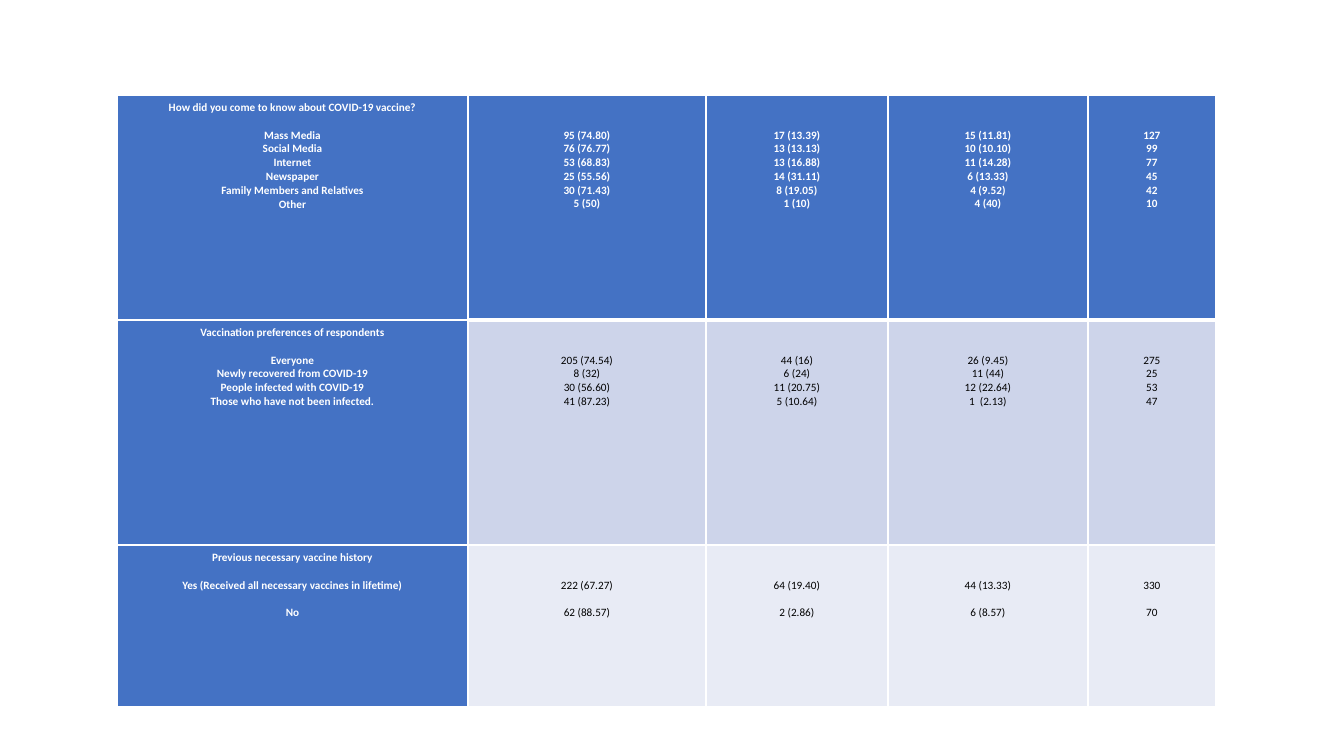
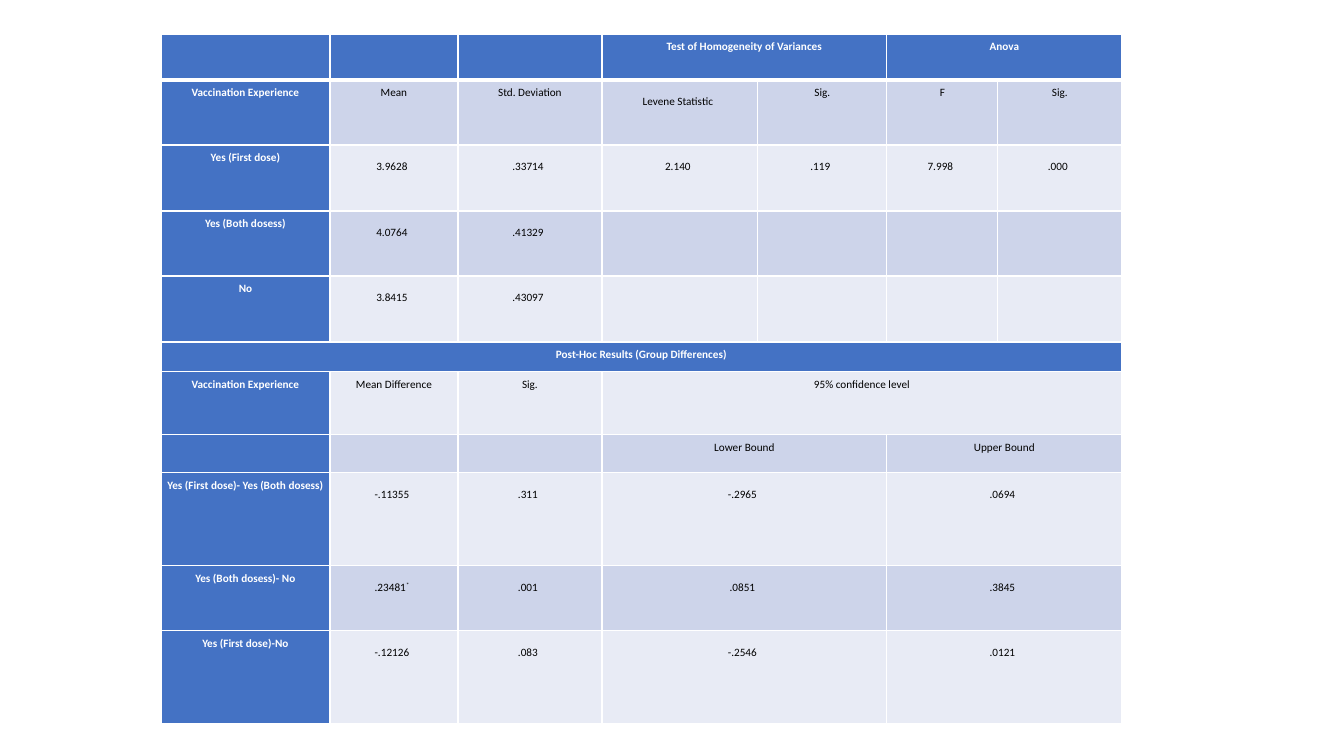
import pptx
import pptx.util
import pptx.dml.color
import pptx.enum.text
import pptx.oxml.ns
import lxml.etree

PX = 914400 / 100.8
FONT, SIZE = "Calibri", 8
LINE = 9.76  # points, height of one text line
INSET = 6
COLORS = {"head": "4472C4", "odd": "CDD4EA", "even": "E8EBF5",
          "white": "FFFFFF", "black": "000000"}

# Each question: heading, blank lines between answers, answers with their counts
SURVEY = [
    ("How did you come to know about COVID-19 vaccine?", 0, [
        ("Mass Media", "95 (74.80)", "17 (13.39)", "15 (11.81)", "127"),
        ("Social Media", "76 (76.77)", "13 (13.13)", "10 (10.10)", "99"),
        ("Internet", "53 (68.83)", "13 (16.88)", "11 (14.28)", "77"),
        ("Newspaper", "25 (55.56)", "14 (31.11)", "6 (13.33)", "45"),
        ("Family Members and Relatives", "30 (71.43)", "8 (19.05)", "4 (9.52)", "42"),
        ("Other", "5 (50)", "1 (10)", "4 (40)", "10"),
    ]),
    ("Vaccination preferences of respondents", 0, [
        ("Everyone", "205 (74.54)", "44 (16)", "26 (9.45)", "275"),
        ("Newly recovered from COVID-19", "8 (32)", "6 (24)", "11 (44)", "25"),
        ("People infected with COVID-19", "30 (56.60)", "11 (20.75)", "12 (22.64)", "53"),
        ("Those who have not been infected.", "41 (87.23)", "5 (10.64)", "1  (2.13)", "47"),
    ]),
    ("Previous necessary vaccine history", 1, [
        ("Yes (Received all necessary vaccines in lifetime)",
         "222 (67.27)", "64 (19.40)", "44 (13.33)", "330"),
        ("No", "62 (88.57)", "2 (2.86)", "6 (8.57)", "70"),
    ]),
]
SURVEY_GRID = {"left": 117, "top": 95, "cols": [351, 238, 182, 200, 128],
               "rows": [225, 225, 162]}

# None continues the cell on its left; * is set as superscript
ANOVA = [
    ("", "", "", "Test of Homogeneity of Variances", None, "Anova", None),
    ("Vaccination Experience", "Mean", "Std. Deviation", "Levene Statistic", "Sig.", "F", "Sig."),
    ("Yes (First dose)", "3.9628", ".33714", "2.140", ".119", "7.998", ".000"),
    ("Yes (Both dosess)", "4.0764", ".41329", "", "", "", ""),
    ("No", "3.8415", ".43097", "", "", "", ""),
    ("Post-Hoc Results (Group Differences)", None, None, None, None, None, None),
    ("Vaccination Experience", "Mean Difference", "Sig.", "95% confidence level", None, None, None),
    ("", "", "", "Lower Bound", None, "Upper Bound", None),
    ("Yes (First dose)- Yes (Both dosess)", "-.11355", ".311", "-.2965", None, ".0694", None),
    ("Yes (Both dosess)- No", ".23481*", ".001", ".0851", None, ".3845", None),
    ("Yes (First dose)-No", "-.12126", ".083", "-.2546", None, ".0121", None),
]
ANOVA_GRID = {"left": 161, "top": 34, "cols": [169, 128, 144, 156, 129, 111, 124],
              "rows": [46, 65, 66, 65, 66, 30, 63, 38, 93, 65, 93]}


def px(n):
    return pptx.util.Emu(round(n * PX))


def rgb(name):
    return pptx.dml.color.RGBColor.from_string(COLORS[name])


def sub(parent, tag, **attrs):
    return lxml.etree.SubElement(parent, pptx.oxml.ns.qn(tag), attrs)


def add_text(p, text, color="black", bold=False, tall=False):
    """Centre the text; tall lines are 16 pt high with a slight right indent."""
    p.alignment = pptx.enum.text.PP_ALIGN.CENTER
    if tall:
        p.line_spacing = pptx.util.Pt(16)
        p._p.get_or_add_pPr().set("marR", str(px(4)))
    for i, part in enumerate(text.partition("*")):
        if not part:
            continue
        r = p.add_run()
        r.text = part
        r.font.name, r.font.size = FONT, pptx.util.Pt(SIZE)
        r.font.bold = bold
        r.font.color.rgb = rgb(color)
        if i == 1:
            r._r.get_or_add_rPr().set("baseline", "30000")
    if not text:
        sub(p._p, "a:endParaRPr", sz=str(SIZE * 100))


def style_cell(cell, fill, thick=()):
    """White borders, 3 pt on the thick sides and 1 pt elsewhere, then the fill."""
    tcPr = cell._tc.get_or_add_tcPr()
    for side in "LRTB":
        width = pptx.util.Pt(3 if side in thick else 1)
        ln = sub(tcPr, "a:ln" + side, w=str(width))
        sub(sub(ln, "a:solidFill"), "a:srgbClr", val=COLORS["white"])
    cell.fill.solid()
    cell.fill.fore_color.rgb = rgb(fill)


def fill_cell(cell, lines, **fmt):
    """lines holds (text, blank lines above it) pairs."""
    cell.margin_left = cell.margin_right = cell.margin_bottom = px(INSET)
    cell.margin_top = px(INSET) + pptx.util.Pt(lines[0][1] * LINE)
    tf = cell.text_frame
    for i, (text, gap) in enumerate(lines):
        p = tf.add_paragraph() if i else tf.paragraphs[0]
        if i and gap:
            p.space_before = pptx.util.Pt(gap * LINE)
        add_text(p, text, **fmt)


def add_grid(prs, grid, cells, head_rows=(0,), rule_from=0, is_tall=lambda text: False):
    """One slide with one table; the rule under the first row starts at column rule_from."""
    s = prs.slides.add_slide(prs.slide_layouts[6])
    cols, rows = grid["cols"], grid["rows"]
    table = s.shapes.add_table(len(rows), len(cols), px(grid["left"]), px(grid["top"]),
                               px(sum(cols)), px(sum(rows))).table
    table.first_row = table.horz_banding = False
    for column, width in zip(table.columns, cols):
        column.width = px(width)
    for row, height in zip(table.rows, rows):
        row.height = px(height)
    for y, row in enumerate(cells):
        for x, lines in enumerate(row):
            cell = table.cell(y, x)
            head = x == 0 or y in head_rows
            thick = {0: "B", 1: "T"}.get(y, "") if x >= rule_from else ""
            style_cell(cell, "head" if head else ("even", "odd")[y % 2], thick)
            lines = lines or [("", 0)]
            fill_cell(cell, lines, color="white" if head else "black", bold=head,
                      tall=not head and is_tall(lines[0][0]))
        starts = [x for x, lines in enumerate(row) if lines is not None]
        for start, end in zip(starts, starts[1:] + [len(row)]):
            if end - start > 1:
                table.cell(y, start).merge(table.cell(y, end - 1))


def survey_row(heading, gap, answers):
    labels, *counts = zip(*answers)

    def spaced(texts, first):
        return [(t, gap if i else first) for i, t in enumerate(texts)]

    return [[(heading, 0)] + spaced(labels, 1)] + [spaced(c, 2) for c in counts]


def is_figure(text):
    return text == "Levene Statistic" or text.lstrip("-.")[:1].isdigit() and "%" not in text


def main():
    prs = pptx.Presentation()
    prs.slide_width, prs.slide_height = px(1344), px(756)
    add_grid(prs, SURVEY_GRID, [survey_row(*q) for q in SURVEY], rule_from=1)
    anova = [[None if t is None else [(t, 0)] for t in row] for row in ANOVA]
    add_grid(prs, ANOVA_GRID, anova, head_rows=(0, 5), is_tall=is_figure)
    prs.save("out.pptx")


if __name__ == "__main__":
    main()
